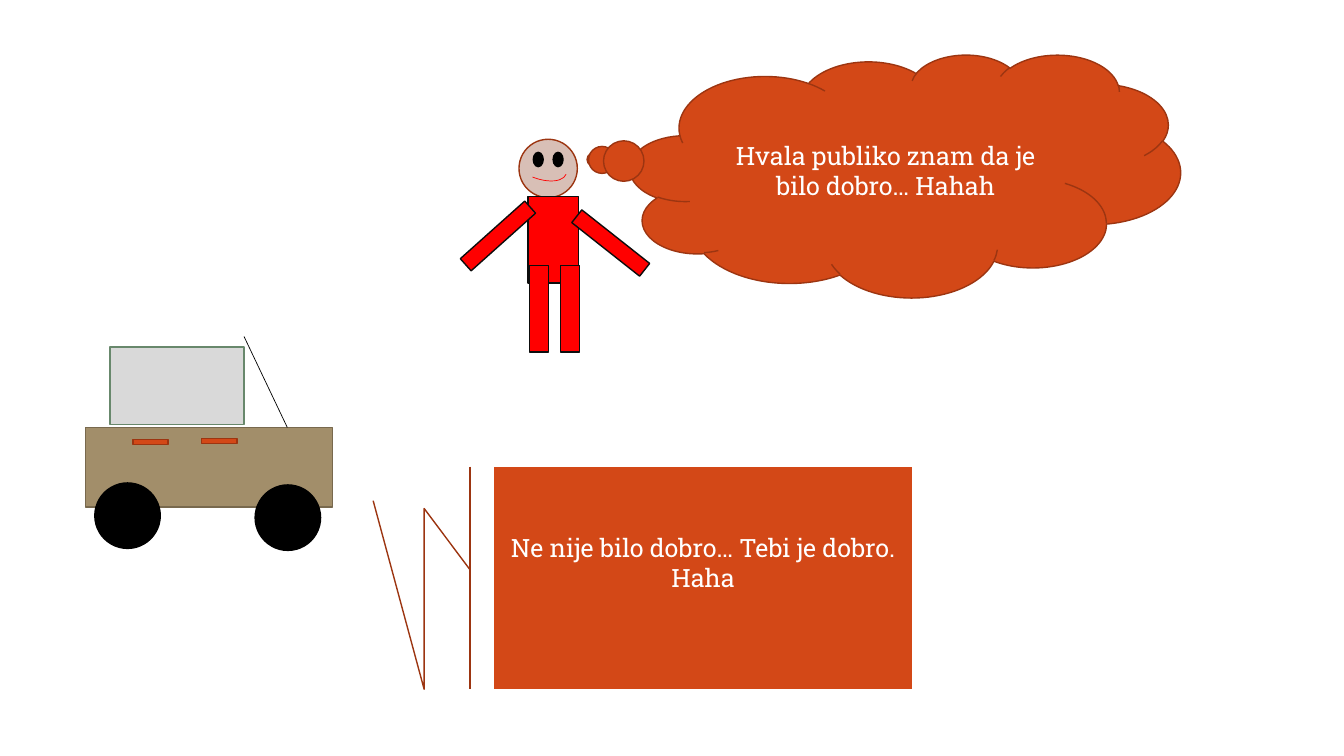
"""Build a slide with a car, a talking figure and two callouts."""
from lxml import etree
from pptx import Presentation
from pptx.dml.color import RGBColor
from pptx.enum.shapes import MSO_CONNECTOR, MSO_SHAPE
from pptx.enum.text import MSO_ANCHOR, PP_ALIGN
from pptx.oxml.ns import qn
from pptx.util import Cm, Pt

RECT, OVAL, ARC = MSO_SHAPE.RECTANGLE, MSO_SHAPE.OVAL, MSO_SHAPE.ARC
CLOUD = MSO_SHAPE.CLOUD_CALLOUT
ACCENT_CALLOUT = MSO_SHAPE.LINE_CALLOUT_3_ACCENT_BAR
STRAIGHT = MSO_CONNECTOR.STRAIGHT
MIDDLE, CENTER = MSO_ANCHOR.MIDDLE, PP_ALIGN.CENTER

THEME = {
    "font": "Roboto Slab", "text_size": 18, "text": "FFFFFF",
    "outline": 1, "thin": 0.5, "black": "000000",
    "orange": ("D34817", "9C3511"),
    "body": ("A28E6A", "78694E"),
    "glass": ("D9D9D9", "68886C"),
    "dark": ("000000", "000000"),
    "skin": ("D8BFB6", "9C3511"),
    "suit": ("FF0000", "0D0D0D"),
    "mouth": (None, "FF0000"),
}

CAR_BODY = (RECT, "body", 2.16, 10.77, 6.22, 2.01)
WHEELS = [(OVAL, "dark", x, y, 1.65, 1.65) for x, y in ((2.39, 12.17), (6.43, 12.22))]
ANTENNA = (7.24, 10.77, 6.15, 8.48)
HANDLES = [(RECT, "orange", x, y, 0.89, 0.13) for x, y in ((5.08, 11.05), (3.35, 11.07))]
WINDOW = (RECT, "glass", 2.77, 8.74, 3.38, 1.96)

HEAD = (OVAL, "skin", 13.08, 3.51, 1.47, 1.47)
EYES = [(OVAL, "dark", x, 3.84, 0.25, 0.36) for x in (13.44, 13.94)]
MOUTH = (ARC, "mouth", 13.18, 3.35, 0.76, 1.52, 111.8)
LIMB = 2.18
TORSO = (RECT, "suit", 12.85, 5.41, LIMB, 1.27, 90)
ARMS = [(RECT, "suit", x, y, LIMB, 0.41, turn)
        for x, y, turn in ((14.3, 5.92, 38.3), (11.46, 5.74, 318.2))]
LEGS = [(RECT, "suit", x, 7.54, LIMB, 0.48, 90) for x in (13.28, 12.5)]

CALLOUTS = [
    {"text": "Hvala publiko znam da je bilo dobro… Hahah",
     "part": (CLOUD, "orange", 15.88, 1.37, 13.87, 6.12),
     "adjust": (-0.566, -0.067), "bottom": 0.13},
    {"text": "Ne nije bilo dobro… Tebi je dobro. Haha",
     "part": (ACCENT_CALLOUT, "orange", 12.45, 11.76, 10.54, 5.61),
     "adjust": (0.464, -0.057, 0.188, -0.167, 1, -0.167, 0.153, -0.289),
     "bottom": 0.9},
]


def rgb(value):
    return RGBColor.from_string(value)


def add_part(s, kind, style, left, top, width, height, turn=0):
    sp = s.shapes.add_shape(kind, Cm(left), Cm(top), Cm(width), Cm(height))
    sp.shadow.inherit = False
    sp.rotation = turn
    fill, line = THEME[style]
    if fill:
        sp.fill.solid()
        sp.fill.fore_color.rgb = rgb(fill)
    else:
        sp.fill.background()
    sp.line.color.rgb = rgb(line)
    sp.line.width = Pt(THEME["outline"] if fill else THEME["thin"])
    return sp


def add_antenna(s):
    line = s.shapes.add_connector(STRAIGHT, *(Cm(v) for v in ANTENNA))
    line.line.color.rgb = rgb(THEME["black"])
    line.line.width = Pt(THEME["thin"])
    etree.SubElement(line._element.spPr, qn("a:effectLst"))


def add_callout(s, callout):
    sp = add_part(s, *callout["part"])
    for i, value in enumerate(callout["adjust"]):
        sp.adjustments[i] = value
    tf = sp.text_frame
    tf.text = callout["text"]
    tf.word_wrap = True
    tf.vertical_anchor = MIDDLE
    tf.margin_bottom = Cm(callout["bottom"])
    p = tf.paragraphs[0]
    p.alignment = CENTER
    font = p.runs[0].font
    font.name = THEME["font"]
    font.size = Pt(THEME["text_size"])
    font.color.rgb = rgb(THEME["text"])


def main():
    prs = Presentation()
    prs.slide_width, prs.slide_height = Cm(33.87), Cm(19.05)
    s = prs.slides.add_slide(prs.slide_layouts[6])
    for part in (CAR_BODY, *WHEELS):
        add_part(s, *part)
    add_antenna(s)
    for part in (*HANDLES, WINDOW, HEAD, *EYES, MOUTH, TORSO, *ARMS, *LEGS):
        add_part(s, *part)
    for callout in CALLOUTS:
        add_callout(s, callout)
    prs.save("out.pptx")


if __name__ == "__main__":
    main()
